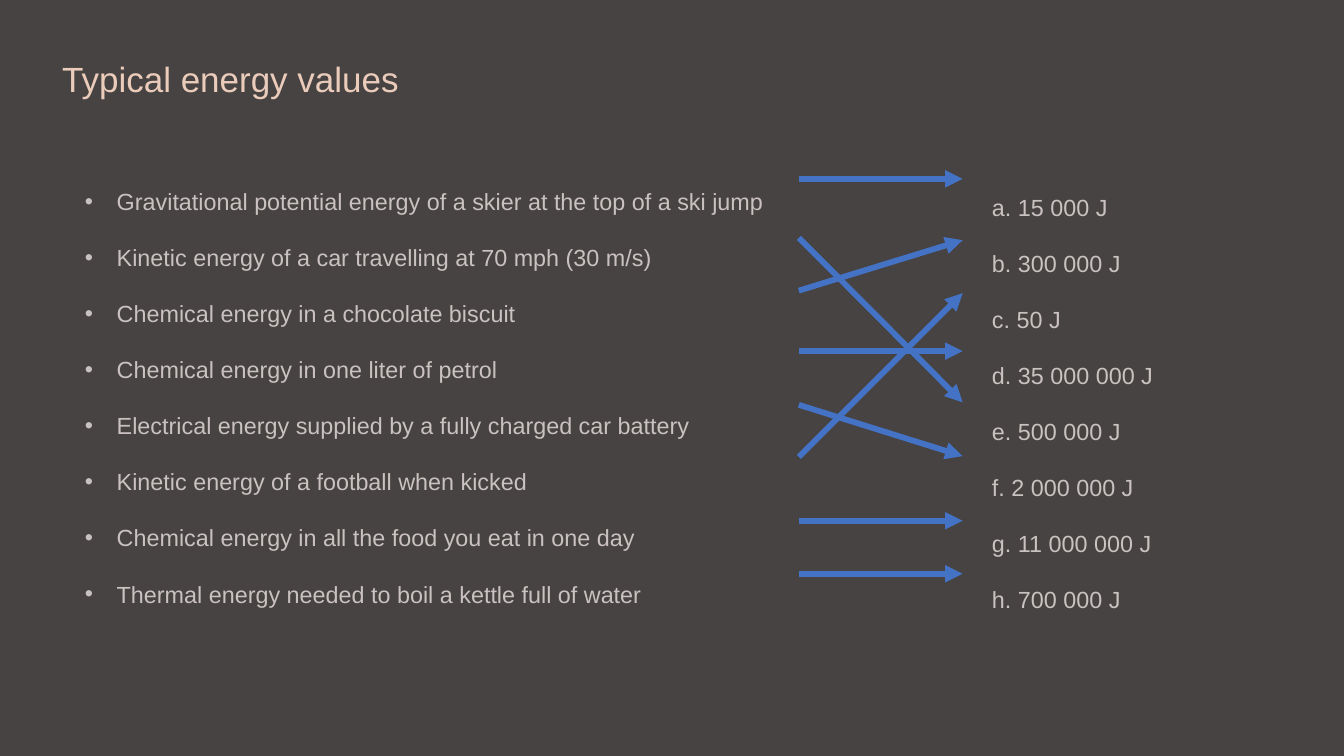
from dataclasses import dataclass

from pptx import Presentation
from pptx.dml.color import RGBColor as Rgb
from pptx.enum.shapes import MSO_CONNECTOR as Link, MSO_SHAPE as Form
from pptx.enum.text import MSO_AUTO_SIZE as Fit
from pptx.oxml.ns import qn
from pptx.slide import Slide
from pptx.util import Inches, Length, Pt
from lxml.etree import SubElement as Sub

GREY = "C9C2C0"
LEFT, RIGHT = 9.51, 11.46


@dataclass
class Arrow:
    start: float
    end: float


@dataclass
class Pair:
    source: str
    value: str


PAIRS = [
    Pair("Gravitational potential energy of a skier at the top of a ski jump", "a. 15 000 J"),
    Pair("Kinetic energy of a car travelling at 70 mph (30 m/s)", "b. 300 000 J"),
    Pair("Chemical energy in a chocolate biscuit", "c. 50 J"),
    Pair("Chemical energy in one liter of petrol", "d. 35 000 000 J"),
    Pair("Electrical energy supplied by a fully charged car battery", "e. 500 000 J"),
    Pair("Kinetic energy of a football when kicked", "f. 2 000 000 J"),
    Pair("Chemical energy in all the food you eat in one day", "g. 11 000 000 J"),
    Pair("Thermal energy needed to boil a kettle full of water", "h. 700 000 J"),
]

ARROWS = [
    Arrow(5.44, 3.49),
    Arrow(2.13, 2.13),
    Arrow(2.83, 4.79),
    Arrow(3.46, 2.86),
    Arrow(4.18, 4.18),
    Arrow(4.82, 5.43),
    Arrow(6.2, 6.2),
    Arrow(6.83, 6.83),
]


def color(code: str) -> Rgb:
    return Rgb.from_string(code)


def add_text(slide: Slide, lines: list[str], left: float, top: float,
             width: float, height: float, *, size: int = 20, tint: str = GREY,
             gap: float | Length = 2.0, wrap: bool = True, grow: bool = True,
             bullet: bool = False) -> None:
    box = slide.shapes.add_textbox(Inches(left), Inches(top), Inches(width), Inches(height))
    frame = box.text_frame
    frame.word_wrap = wrap
    frame.auto_size = Fit.SHAPE_TO_FIT_TEXT if grow else Fit.NONE
    frame.margin_left = frame.margin_right = Inches(0.05)
    frame.margin_top = frame.margin_bottom = Inches(0.05)
    frame.text = "\n".join(lines)
    for para in frame.paragraphs:
        para.line_spacing = gap
        font = para.runs[0].font
        font.name, font.size = "Arial", Pt(size)
        font.color.rgb = color(tint)
        if bullet:
            props = para._p.get_or_add_pPr()
            props.set("marL", str(Inches(0.38)))
            props.set("indent", str(Inches(-0.38)))
            Sub(props, qn("a:buFont"), typeface="Arial")
            Sub(props, qn("a:buChar"), char="•")


def add_arrow(slide: Slide, arrow: Arrow) -> None:
    link = slide.shapes.add_connector(
        Link.STRAIGHT, Inches(LEFT), Inches(arrow.start), Inches(RIGHT), Inches(arrow.end))
    link.line.color.rgb = color("4472C4")
    link.line.width = Pt(5)
    Sub(link.line._get_or_add_ln(), qn("a:tailEnd"), type="triangle")
    Sub(link._element.spPr, qn("a:effectLst"))


def main() -> None:
    deck = Presentation()
    deck.slide_width, deck.slide_height = Inches(16), Inches(9)
    slide = deck.slides.add_slide(deck.slide_layouts[6])

    back = slide.shapes.add_shape(Form.RECTANGLE, 0, 0, Inches(16), Inches(9))
    back.shadow.inherit = False
    back.fill.solid()
    back.fill.fore_color.rgb = color("464342")
    back.line.fill.background()

    add_text(slide, ["Typical energy values"], 0.69, 0.59, 4.12, 0.63,
             size=30, tint="EBCCBB", gap=Pt(39), wrap=False)
    add_text(slide, [pair.source for pair in PAIRS], 0.96, 1.85, 8.92, 5.3,
             grow=False, bullet=True)
    add_text(slide, [pair.value for pair in PAIRS], 11.76, 1.92, 4.64, 5.1)
    for arrow in ARROWS:
        add_arrow(slide, arrow)
    deck.save("out.pptx")


if __name__ == "__main__":
    main()
